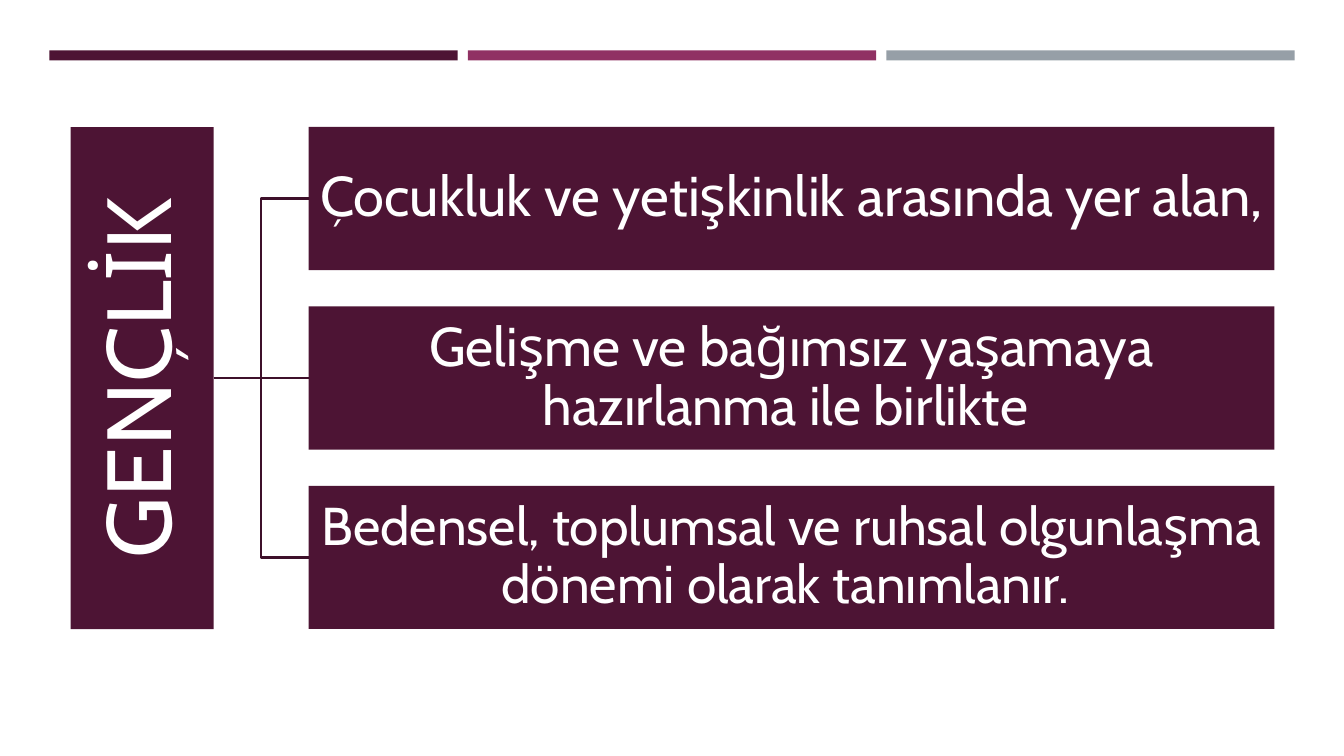
"""Build the slide that defines youth with a three-branch diagram."""
from typing import NamedTuple

from lxml import etree
from pptx import Presentation
from pptx.dml.color import RGBColor
from pptx.enum.shapes import MSO_CONNECTOR, MSO_SHAPE
from pptx.enum.text import MSO_ANCHOR, PP_ALIGN
from pptx.oxml.ns import qn
from pptx.shapes.autoshape import Shape
from pptx.slide import Slide
from pptx.util import Pt

RECTANGLE = MSO_SHAPE.RECTANGLE
ELBOW, STRAIGHT = MSO_CONNECTOR.ELBOW, MSO_CONNECTOR.STRAIGHT
MIDDLE, CENTER = MSO_ANCHOR.MIDDLE, PP_ALIGN.CENTER

PLUM = RGBColor(0x4D, 0x14, 0x34)
MAGENTA = RGBColor(0x90, 0x31, 0x63)
GRAY = RGBColor(0x96, 0x9F, 0xA7)
DARK_PLUM = RGBColor(0x3E, 0x10, 0x2A)
WHITE = RGBColor(0xFF, 0xFF, 0xFF)

FONT = "Cabin"
EMU_PER_PX = 9144
LEFT_SIDE = 1


class Box(NamedTuple):
    left: int
    top: int
    width: int
    height: int


class Label(NamedTuple):
    text: str
    size: int
    inset: int


class Branch(NamedTuple):
    label: Label
    connector: MSO_CONNECTOR


STRIPE = Box(49, 50, 405, 10)
STRIPE_PITCH = 415
STRIPE_COLORS = (PLUM, MAGENTA, GRAY)

TITLE_BOX = Box(-108, 304, 498, 142)
TITLE = Label("GENÇLİK", 65, 5)
TRUNK_X, TRUNK_Y = 212, 375

BRANCH_BOX = Box(306, 126, 958, 142)
BRANCH_PITCH = 178
BRANCHES = (
    Branch(Label("Çocukluk ve yetişkinlik arasında yer alan,", 40, 3), ELBOW),
    Branch(Label("Gelişme ve bağımsız yaşamaya hazırlanma ile birlikte ", 39, 3), STRAIGHT),
    Branch(Label("Bedensel, toplumsal ve ruhsal olgunlaşma dönemi olarak tanımlanır. ", 38, 3), ELBOW),
)


def px(length: int) -> int:
    """Turn px into EMU."""
    return length * EMU_PER_PX


def add_box(slide: Slide, box: Box, color: RGBColor) -> Shape:
    """Add a plain filled rectangle."""
    sp = slide.shapes.add_shape(RECTANGLE, *map(px, box))
    sp.shadow.inherit = False
    sp.fill.solid()
    sp.fill.fore_color.rgb = color
    sp.line.fill.background()
    return sp


def add_label(sp: Shape, label: Label) -> None:
    """Write centred white text in a box."""
    tf = sp.text_frame
    tf.word_wrap = True
    tf.vertical_anchor = MIDDLE
    tf.margin_left = tf.margin_top = tf.margin_right = tf.margin_bottom = px(label.inset)
    tf.text = label.text
    p = tf.paragraphs[0]
    p.alignment = CENTER
    p.line_spacing = 0.9
    font = p.runs[0].font
    font.name = FONT
    font.size = Pt(label.size)
    font.color.rgb = WHITE


def add_branch(slide: Slide, branch: Branch, box: Box) -> None:
    """Add a branch box and the line that joins it to the title."""
    sp = add_box(slide, box, PLUM)
    add_label(sp, branch.label)
    middle = box.top + box.height // 2
    line = slide.shapes.add_connector(
        branch.connector, px(TRUNK_X), px(TRUNK_Y), px(box.left), px(middle))
    line.end_connect(sp, LEFT_SIDE)
    line.line.color.rgb = DARK_PLUM
    line.line.width = Pt(1.75)
    etree.SubElement(line._element.spPr, qn("a:effectLst"))


def main() -> None:
    """Draw the slide and save it."""
    prs = Presentation()
    prs.slide_width, prs.slide_height = px(1333), px(750)
    slide = prs.slides.add_slide(prs.slide_layouts[6])

    for i, color in enumerate(STRIPE_COLORS):
        add_box(slide, STRIPE._replace(left=STRIPE.left + i * STRIPE_PITCH), color)

    title = add_box(slide, TITLE_BOX, PLUM)
    title.rotation = 270
    add_label(title, TITLE)

    for i, branch in enumerate(BRANCHES):
        add_branch(slide, branch, BRANCH_BOX._replace(top=BRANCH_BOX.top + i * BRANCH_PITCH))

    prs.save("out.pptx")


if __name__ == "__main__":
    main()
